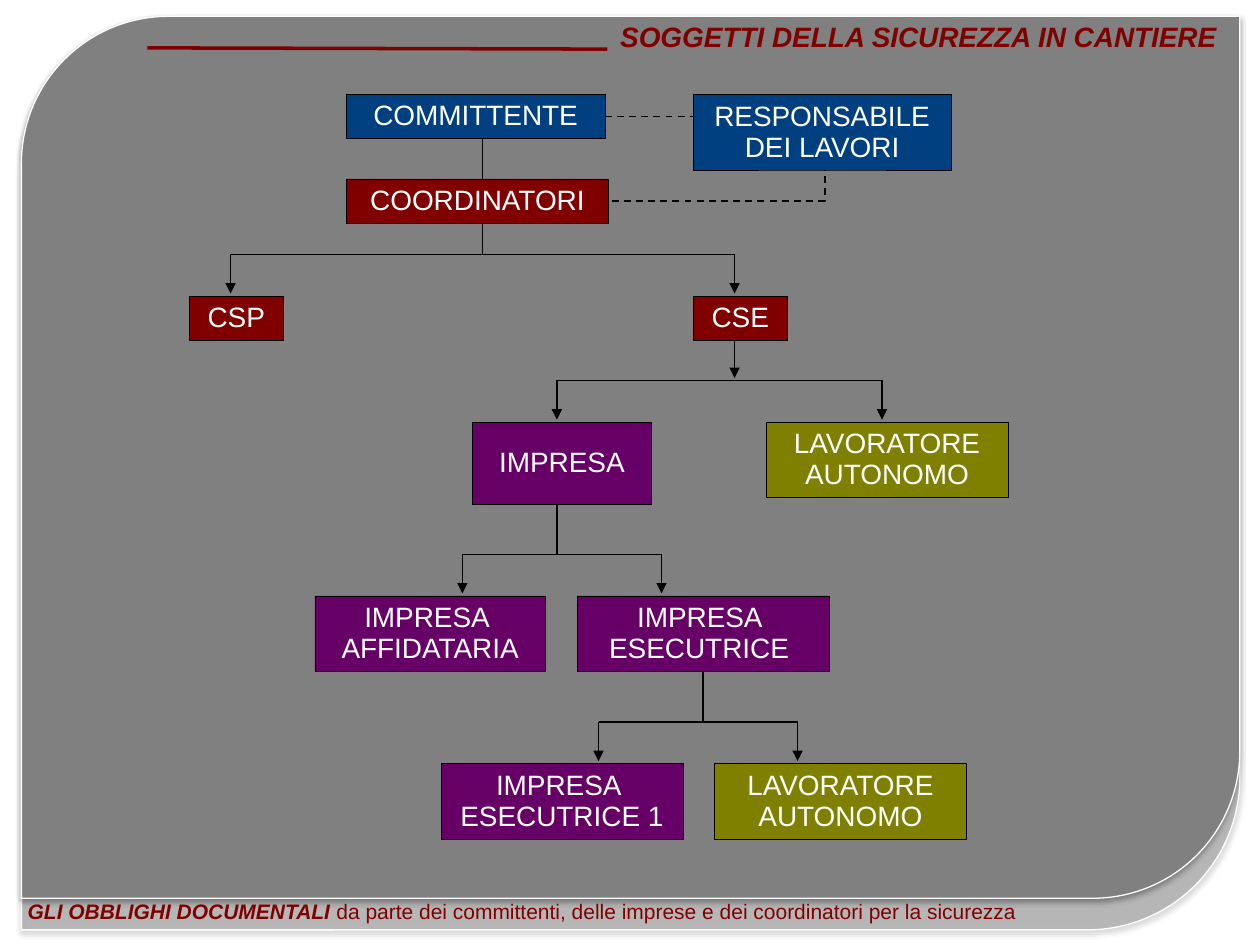
"""Build the slide charting the parties responsible for safety on a building site."""
import pptx
import pptx.util
import pptx.oxml
import pptx.oxml.ns
import pptx.dml.color
import pptx.enum.dml
import pptx.enum.shapes
import pptx.enum.text

Inches = pptx.util.Inches
Pt = pptx.util.Pt
RGBColor = pptx.dml.color.RGBColor
MSO_SHAPE = pptx.enum.shapes.MSO_SHAPE
MSO_CONNECTOR = pptx.enum.shapes.MSO_CONNECTOR
PP_ALIGN = pptx.enum.text.PP_ALIGN
MSO_AUTO_SIZE = pptx.enum.text.MSO_AUTO_SIZE
qn = pptx.oxml.ns.qn
NS = pptx.oxml.ns.nsdecls("a")

WHITE = RGBColor(0xFF, 0xFF, 0xFF)
BLACK = RGBColor(0x00, 0x00, 0x00)
GRAY = RGBColor(0x80, 0x80, 0x80)
MAROON = RGBColor(0x80, 0x00, 0x00)
BLUE = RGBColor(0x00, 0x40, 0x80)
PURPLE = RGBColor(0x66, 0x00, 0x66)
OLIVE = RGBColor(0x80, 0x80, 0x00)

SHADOW = (
    f'<a:effectLst {NS}><a:outerShdw blurRad="39370" dist="22860" dir="5400000" '
    'rotWithShape="0"><a:srgbClr val="000000"><a:alpha val="35000"/></a:srgbClr>'
    '</a:outerShdw></a:effectLst>'
)

prs = pptx.Presentation()
prs.slide_width, prs.slide_height = Inches(10), Inches(7.5)
s = prs.slides.add_slide(prs.slide_layouts[6])


def format_text(tf, align, size, color):
    tf.word_wrap = True
    tf.vertical_anchor = pptx.enum.text.MSO_ANCHOR.MIDDLE
    for p in tf.paragraphs:
        p.alignment = align
        p.line_spacing = 0.93
        for r in p.runs:
            r.font.name = "Arial"
            r.font.size = Pt(size)
            r.font.color.rgb = color


def add_line(x1, y1, x2, y2, arrow=False, color=BLACK, width=0.75, kind=MSO_CONNECTOR.STRAIGHT):
    line = s.shapes.add_connector(kind, Inches(x1), Inches(y1), Inches(x2), Inches(y2))
    line.line.color.rgb = color
    line.line.width = Pt(width)
    sppr = line._element.spPr
    if arrow:
        sppr.find(qn("a:ln")).append(pptx.oxml.parse_xml(f'<a:tailEnd {NS} type="triangle"/>'))
    sppr.append(pptx.oxml.parse_xml(f"<a:effectLst {NS}/>"))
    return line


for height, alpha in [(7.25, 40), (7, 100)]:
    panel = s.shapes.add_shape(
        MSO_SHAPE.ROUND_2_DIAG_RECTANGLE, Inches(0.17), Inches(0.13), Inches(9.67), Inches(height)
    )
    panel.fill.solid()
    panel.fill.fore_color.rgb = GRAY
    panel.line.color.rgb = WHITE
    panel.line.width = Pt(0.75)
    sppr = panel._element.spPr
    if alpha < 100:
        clr = sppr.find(qn("a:solidFill")).find(qn("a:srgbClr"))
        clr.append(pptx.oxml.parse_xml(f'<a:alpha {NS} val="{alpha * 1000}"/>'))
    sppr.append(pptx.oxml.parse_xml(SHADOW))

captions = [
    (0.13, 7.1, 8.67, 0.28, PP_ALIGN.JUSTIFY, 12, "GLI OBBLIGHI DOCUMENTALI ",
     "da parte dei committenti, delle imprese e dei coordinatori per la sicurezza"),
    (4.75, 0.13, 5, 0.34, PP_ALIGN.RIGHT, 16, " SOGGETTI DELLA SICUREZZA IN CANTIERE", ""),
]
for x, y, w, h, align, size, strong, plain in captions:
    tf = s.shapes.add_textbox(Inches(x), Inches(y), Inches(w), Inches(h)).text_frame
    tf.margin_left = tf.margin_right = Inches(0.09)
    tf.margin_top = tf.margin_bottom = Inches(0.04)
    tf.auto_size = MSO_AUTO_SIZE.SHAPE_TO_FIT_TEXT
    p = tf.paragraphs[0]
    p.text = strong
    p.runs[0].font.bold = p.runs[0].font.italic = True
    if plain:
        p.add_run().text = plain
    format_text(tf, align, size, MAROON)

add_line(4.82, 0.39, 1.17, 0.38, color=MAROON, width=2)
add_line(3.83, 1.02, 3.83, 2.02)

nodes = [
    ("COMMITTENTE", 2.75, 0.75, 2.05, 0.35, BLUE),
    ("RESPONSABILE DEI LAVORI", 5.5, 0.75, 2.05, 0.6, BLUE),
    ("COORDINATORI", 2.75, 1.42, 2.08, 0.35, MAROON),
    ("CSP", 1.5, 2.35, 0.75, 0.35, MAROON),
    ("CSE", 5.5, 2.35, 0.75, 0.35, MAROON),
    ("IMPRESA", 3.75, 3.35, 1.42, 0.65, PURPLE),
    ("LAVORATORE AUTONOMO", 6.08, 3.35, 1.92, 0.6, OLIVE),
    ("IMPRESA \nAFFIDATARIA", 2.5, 4.73, 1.83, 0.6, PURPLE),
    ("IMPRESA \nESECUTRICE ", 4.58, 4.73, 2, 0.6, PURPLE),
    ("IMPRESA \nESECUTRICE 1", 3.5, 6.06, 1.92, 0.6, PURPLE),
    ("LAVORATORE AUTONOMO", 5.67, 6.06, 2, 0.6, OLIVE),
]
boxes = {}
for text, x, y, w, h, color in nodes:
    sp = s.shapes.add_shape(MSO_SHAPE.RECTANGLE, Inches(x), Inches(y), Inches(w), Inches(h))
    sp.shadow.inherit = False
    sp.fill.solid()
    sp.fill.fore_color.rgb = color
    sp.line.color.rgb = BLACK
    sp.line.width = Pt(0.25)
    tf = sp.text_frame
    tf.text = text
    format_text(tf, PP_ALIGN.CENTER, 16, WHITE)
    if text != "IMPRESA":
        tf.auto_size = MSO_AUTO_SIZE.SHAPE_TO_FIT_TEXT
    boxes[text] = sp

for left, right, y in [(1.83, 5.83, 2.02), (4.42, 7, 3.02), (3.67, 5.25, 4.4), (4.75, 6.33, 5.73)]:
    add_line(left, y, right, y)
    for x in (left, right):
        add_line(x, y, x, y + 0.31, arrow=True)

add_line(5.83, 2.7, 5.83, 3, arrow=True)
add_line(4.42, 4, 4.42, 4.4)
stem = add_line(5.58, 5.33, 5.58, 5.73)
stem.begin_connect(boxes["IMPRESA \nESECUTRICE "], 2)

elbow = add_line(4.8, 0.93, 4.83, 1.59, width=1, kind=MSO_CONNECTOR.ELBOW)
elbow.line.dash_style = pptx.enum.dml.MSO_LINE.DASH
elbow.begin_connect(boxes["COMMITTENTE"], 3)
elbow.end_connect(boxes["COORDINATORI"], 3)
geometry = elbow._element.spPr.find(qn("a:prstGeom"))
bend = round(Inches(1.75) / elbow.width * 100000)
geometry.replace(
    geometry.find(qn("a:avLst")),
    pptx.oxml.parse_xml(f'<a:avLst {NS}><a:gd name="adj1" fmla="val {bend}"/></a:avLst>'),
)
for part in ("RESPONSABILE DEI LAVORI",):
    s.shapes._spTree.append(boxes[part]._element)

prs.save("out.pptx")
